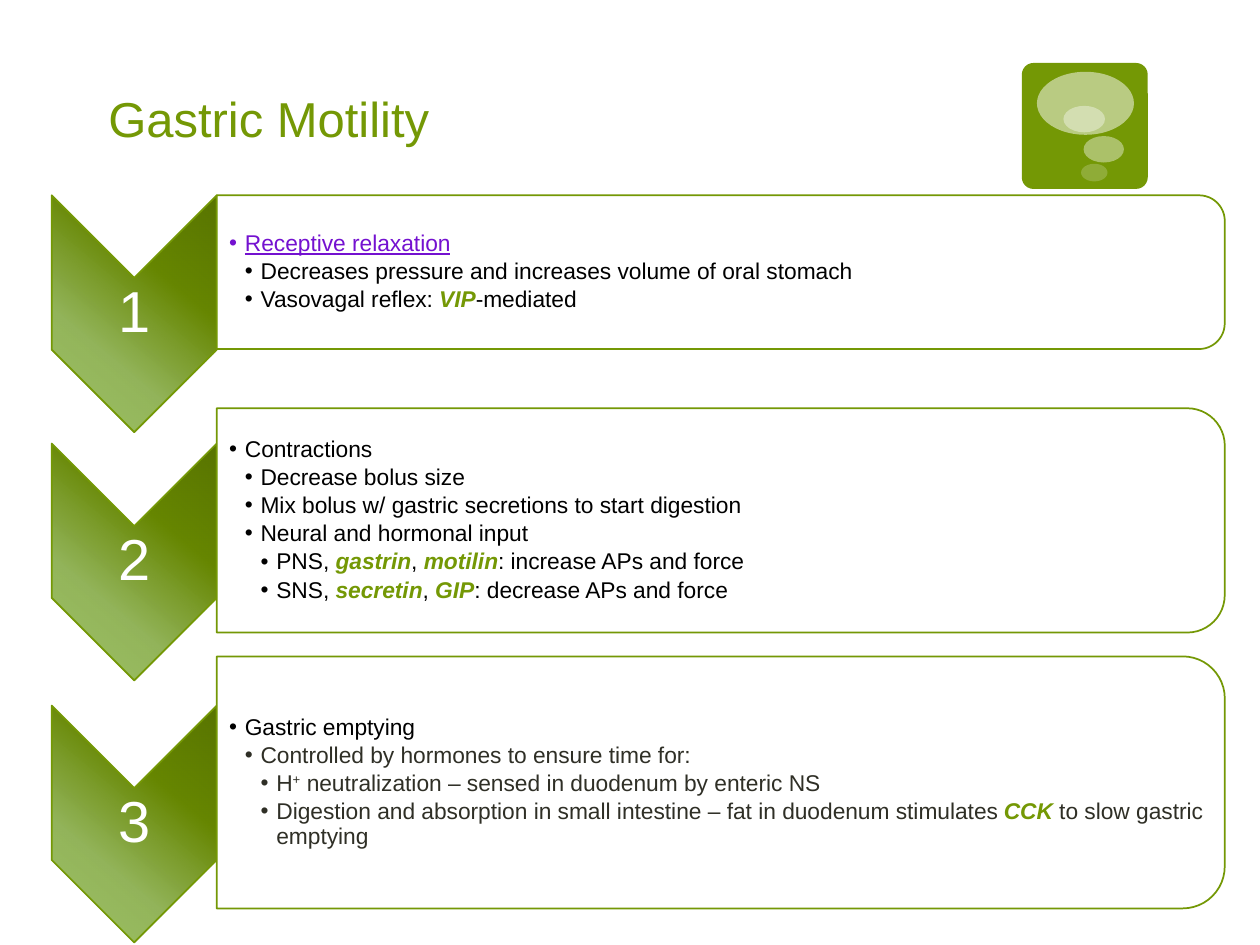
from lxml.etree import SubElement
from pptx import Presentation
from pptx.dml.color import RGBColor
from pptx.enum.shapes import MSO_SHAPE as SHAPE
from pptx.enum.text import MSO_ANCHOR as ANCHOR, PP_ALIGN as ALIGN
from pptx.oxml import parse_xml
from pptx.oxml.ns import nsdecls, qn
from pptx.util import Inches, Pt

COLORS = {"green": "749805", "white": "FFFFFF", "black": "000000",
          "dark": "2F2F26", "link": "7411D0"}
STOPS = [(0, "8FB84C", 85), (33, "8EB153", 95), (67, "668600", 100), (100, "587400", 100)]
STYLES = {"link": {"color": "link", "underline": True},
          "term": {"color": "green", "bold": True, "italic": True},
          "super": {"color": "dark", "base": 30},
          "black": {"color": "black"}, "dark": {"color": "dark"}}
STEPS = [
    (1.55, 1.55, 1.22, [
        (1, [("Receptive relaxation", "link")]),
        (2, [("Decreases pressure and increases volume of oral stomach", "black")]),
        (2, [("Vasovagal reflex: ", "black"), ("VIP", "term"), ("-mediated", "black")])]),
    (3.52, 3.24, 1.78, [
        (1, [("Contractions", "black")]),
        (2, [("Decrease bolus size", "black")]),
        (2, [("Mix bolus w/ gastric secretions to start digestion", "black")]),
        (2, [("Neural and hormonal input", "black")]),
        (3, [("PNS, ", "black"), ("gastrin", "term"), (", ", "black"),
             ("motilin", "term"), (": increase APs and force", "black")]),
        (3, [("SNS, ", "black"), ("secretin", "term"), (", ", "black"),
             ("GIP", "term"), (": decrease APs and force", "black")])]),
    (5.6, 5.21, 2, [
        (1, [("Gastric emptying", "black")]),
        (2, [("Controlled by hormones to ensure time for:", "dark")]),
        (3, [("H", "dark"), ("+", "super"),
             (" neutralization – sensed in duodenum by enteric NS", "dark")]),
        (3, [("Digestion and absorption in small intestine – fat in duodenum stimulates ", "dark"),
             ("CCK ", "term"), ("to slow gastric emptying", "dark")])]),
]


def add_shape(s, kind, x, y, w, h, alpha=100, color="white", line=None):
    """Add a preset shape with a solid fill, opacity in percent and optional line."""
    sp = s.shapes.add_shape(kind, Inches(x), Inches(y), Inches(w), Inches(h))
    sp.shadow.inherit = False
    sp.fill.solid()
    sp.fill.fore_color.rgb = RGBColor.from_string(COLORS[color])
    if alpha < 100:
        clr = sp._element.spPr.find(qn("a:solidFill"))[0]
        SubElement(clr, qn("a:alpha"), val=str(alpha * 1000))
    if line:
        sp.line.color.rgb = RGBColor.from_string(COLORS[line])
        sp.line.width = Pt(1)
    else:
        sp.line.fill.background()
    return sp


def add_turned(s, kind, x, y, w, h, alpha=100):
    """Add an outlined shape turned by 90 degrees that covers the given box."""
    sp = add_shape(s, kind, x + (w - h) / 2, y + (h - w) / 2, h, w, alpha, line="green")
    sp.rotation = 90
    return sp


def add_frame(s, x, y, w, h, anchor, insets):
    """Add a wrapping text box and return its text frame."""
    tf = s.shapes.add_textbox(Inches(x), Inches(y), Inches(w), Inches(h)).text_frame
    tf.word_wrap = True
    tf.vertical_anchor = anchor
    tf.margin_left, tf.margin_top, tf.margin_right, tf.margin_bottom = map(Inches, insets)
    return tf


def add_run(p, text, size, color, bold=False, italic=False, underline=False, base=0):
    """Add one formatted run to a paragraph."""
    r = p.add_run()
    r.text = text
    font = r.font
    font.name, font.size = "Arial", Pt(size)
    font.bold, font.italic, font.underline = bold, italic, underline
    font.color.rgb = RGBColor.from_string(COLORS[color])
    if base:
        r._r.get_or_add_rPr().set("baseline", str(base * 1000))


def set_bullet(p, level):
    """Give a paragraph a round bullet and the indent of its level."""
    p.level = level
    pPr = p._p.get_or_add_pPr()
    pPr.set("marL", str(Inches(0.125 * level)))
    pPr.set("indent", str(Inches(-0.125)))
    SubElement(pPr, qn("a:buFont"), typeface="Arial")
    SubElement(pPr, qn("a:buChar"), char="•")


def set_gradient(sp):
    """Replace the solid fill of a shape by the green gradient."""
    stops = "".join(
        f'<a:gs pos="{pos * 1000}"><a:srgbClr val="{color}">'
        f'<a:alpha val="{alpha * 1000}"/></a:srgbClr></a:gs>'
        for pos, color, alpha in STOPS)
    grad = parse_xml(f'<a:gradFill {nsdecls("a")} rotWithShape="1"><a:gsLst>{stops}</a:gsLst>'
                     f'<a:lin ang="{220 * 60000}" scaled="0"/></a:gradFill>')
    spPr = sp._element.spPr
    spPr.replace(spPr.find(qn("a:solidFill")), grad)


def add_badge(s, x, y, size):
    """Draw the green tile with its thought bubbles."""
    tile = add_shape(s, SHAPE.ROUNDED_RECTANGLE, x, y, size, size, color="green")
    tile.adjustments[0] = 0.093
    for dx, dy, w, h, alpha in [(0.12, 0.07, 0.77, 0.5, 50), (0.49, 0.58, 0.32, 0.21, 40),
                                (0.47, 0.8, 0.21, 0.14, 20), (0.33, 0.34, 0.33, 0.21, 38)]:
        add_shape(s, SHAPE.OVAL, x + dx * size, y + dy * size, w * size, h * size, alpha)


def add_title(s, x, y, w, h, text):
    """Write the slide title."""
    tf = add_frame(s, x, y, w, h, ANCHOR.BOTTOM, (0.05, 0.05, 0.1, 0.05))
    add_run(tf.paragraphs[0], text, 28, "green")


def add_marker(s, x, y, w, h, number):
    """Draw a numbered chevron that points down."""
    set_gradient(add_turned(s, SHAPE.CHEVRON, x, y, w, h))
    tf = add_frame(s, x, y + w / 2, w, h - w, ANCHOR.MIDDLE, (0.02,) * 4)
    p = tf.paragraphs[0]
    p.alignment, p.line_spacing = ALIGN.CENTER, 0.9
    add_run(p, str(number), 33, "white")


def add_panel(s, x, y, w, h, items):
    """Draw a panel rounded on the right and its bulleted text."""
    add_turned(s, SHAPE.ROUND_2_SAME_RECTANGLE, x, y, w, h, alpha=90)
    inset = 0.05 * h
    tf = add_frame(s, x, y + inset, w - inset, h - 2 * inset, ANCHOR.MIDDLE,
                   (0.1, 0.01, 0.01, 0.01))
    for i, (level, runs) in enumerate(items):
        p = tf.add_paragraph() if i else tf.paragraphs[0]
        p.line_spacing, p.space_after = 0.9, Pt(2)
        set_bullet(p, level)
        for text, style in runs:
            add_run(p, text, 13, **STYLES[style])


def main():
    """Build the slide and save it."""
    prs = Presentation()
    prs.slide_width, prs.slide_height = Inches(10), Inches(7.5)
    s = prs.slides.add_slide(prs.slide_layouts[6])
    add_badge(s, 8.11, 0.5, 1)
    add_title(s, 0.81, 0.25, 5.25, 0.97, "Gastric Motility")
    for number, (marker_y, panel_y, panel_h, items) in enumerate(STEPS, 1):
        add_marker(s, 0.41, marker_y, 1.31, 1.88, number)
        add_panel(s, 1.72, panel_y, 8, panel_h, items)
    prs.save("out.pptx")


if __name__ == "__main__":
    main()
